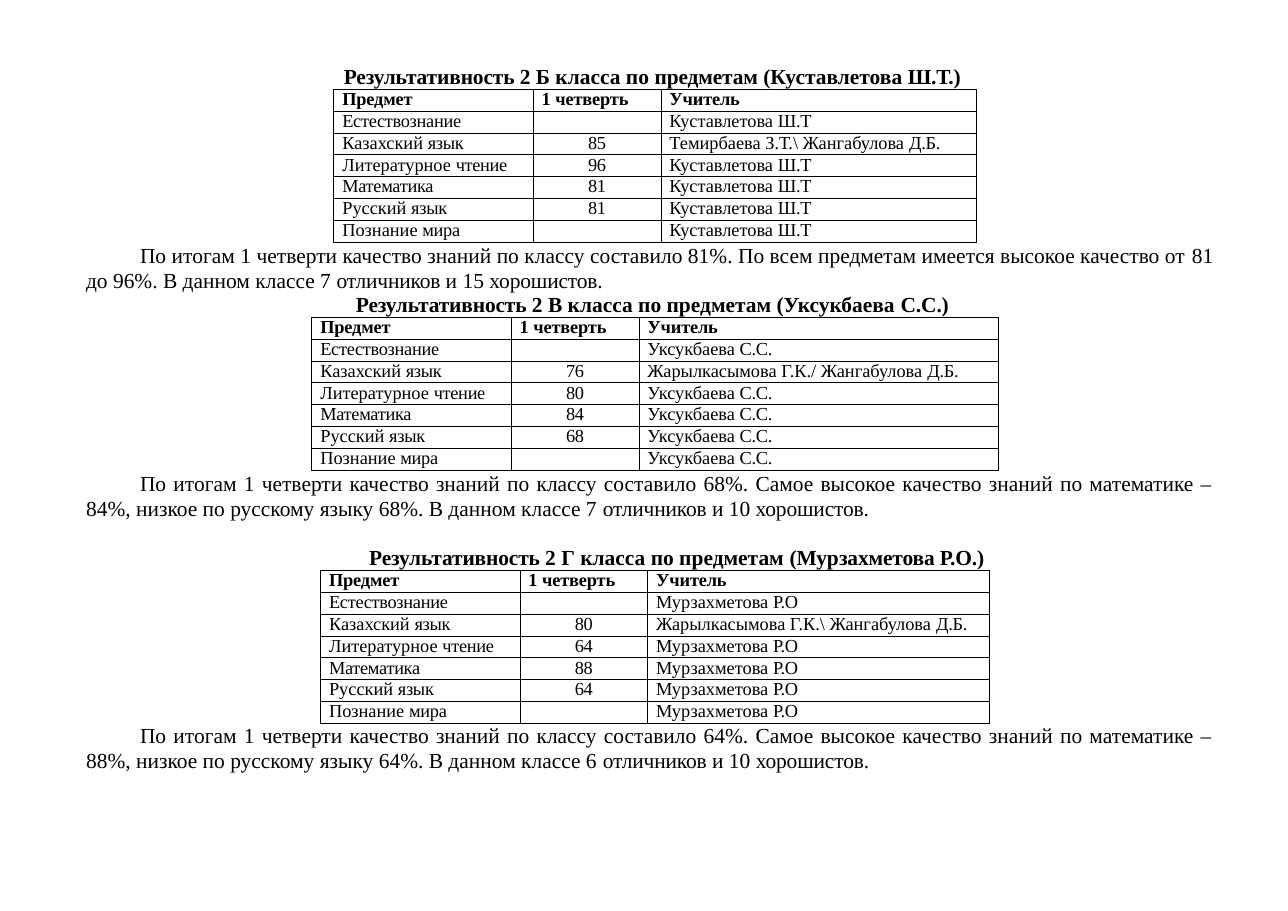
"""Build a slide of school results: three class tables with their summaries."""
from dataclasses import dataclass

from lxml.etree import SubElement as Sub
from pptx import Presentation as Deck
from pptx.dml.color import RGBColor as Color
from pptx.enum.text import MSO_AUTO_SIZE as Fit, PP_ALIGN as Align
from pptx.oxml.ns import qn
from pptx.slide import Slide
from pptx.text.text import TextFrame as Frame
from pptx.util import Inches, Pt


@dataclass(frozen=True)
class Theme:
    """Colours, font and type sizes in points."""
    ink: str = "000000"
    font: str = "Times New Roman"
    body: float = 14
    cell: float = 12
    blank: float = 10
    rule: float = 0.5


@dataclass(frozen=True)
class Group:
    """One class table; lengths are percent of the slide."""
    left: float
    top: float
    last: float
    tutor: str
    pair: str
    marks: tuple[str, ...]


@dataclass(frozen=True)
class Note:
    """A text box; a bar in its text switches tight spacing on or off."""
    left: float
    top: float
    wide: float
    tall: float
    inset: float
    title: str
    text: str = ""
    shift: float = 0.09
    before: float = 0
    pitch: float | None = None


THEME = Theme()
WIDE, TALL = Inches(11.69), Inches(8.27)
ROW, FIRST, SECOND, PAD = 2.4, 15.48, 9.92, 0.66
HEAD = ("Предмет", "1 четверть", "Учитель")
TOPICS = ("Естествознание", "Казахский язык", "Литературное чтение",
          "Математика", "Русский язык", "Познание мира")
LEAD = "По итогам 1 четверти качество знаний по классу составило "
BEST = "Самое высокое качество знаний по математике – "

GROUPS = (
    Group(25.92, 9.79, 24.47, "Куставлетова Ш.Т",
          "Темирбаева З.Т.\\ Жангабулова Д.Б.", ("", "85", "96", "81", "81", "")),
    Group(24.21, 34.82, 27.89, "Уксукбаева С.С.",
          "Жарылкасымова Г.К./ Жангабулова Д.Б.", ("", "76", "80", "84", "68", "")),
    Group(24.89, 62.6, 26.52, "Мурзахметова Р.О",
          "Жарылкасымова Г.К.\\ Жангабулова Д.Б.", ("", "80", "64", "88", "64", "")),
)
NOTES = (
    Note(26.6, 6.77, 48.85, 3.14, 0.12,
         "|Результативность |2 Б класса по |предметам |(Куставлетова |Ш.Т.)", before=0.9),
    Note(6.59, 26.36, 88.45, 8.59, 0.36,
         "|Результативность |2 В класса по предметам (Уксукбаева |С.С.)",
         LEAD + "81%. По всем предметам имеется высокое качество от |81 |"
         "до 96%. В данном классе 7| отличников |и 15 |хорошистов.",
         shift=21.04, pitch=15.9),
    Note(6.59, 51.39, 88.45, 11.25, 0.36,
         "|Результативность |2 Г класса по предметам |(Мурзахметова Р.О.)",
         LEAD + "68%. " + BEST + "84%, низкое по русскому языку 68%. "
         "В данном классе 7 |отличников |и 10| хорошистов.",
         shift=22.07, before=15.2),
    Note(6.59, 79.08, 88.45, 5.8, 0.36, "",
         LEAD + "64%. " + BEST + "88%, низкое по русскому языку 64%. "
         "В данном классе 6 |отличников |и 10 |хорошистов."),
)


def across(share: float) -> int:
    """Turn a percent of the slide's width into a length."""
    return round(WIDE * share / 100)


def down(share: float) -> int:
    """Turn a percent of the slide's height into a length."""
    return round(TALL * share / 100)


def write(frame: Frame, text: str, *, size: float, bold: bool = False,
          align: Align = Align.LEFT, left: float = 0, right: float = 0,
          indent: float = 0, pitch: float | None = None, before: float = 0,
          tight: int = -10) -> None:
    """Add one paragraph in the given format."""
    para = frame.paragraphs[0]
    if para.runs:
        para = frame.add_paragraph()
    para.alignment, para.space_before = align, Pt(before)
    if pitch:
        para.line_spacing = Pt(pitch)
    props = para._p.get_or_add_pPr()
    for name, share in (("marL", left), ("marR", right), ("indent", indent)):
        props.set(name, str(across(share)))
    for turn, part in enumerate(text.split("|")):
        if not part:
            continue
        run = para.add_run()
        run.text = part
        font = run.font
        font.name, font.size, font.bold = THEME.font, Pt(size), bold
        font.color.rgb = Color.from_string(THEME.ink)
        run._r.get_or_add_rPr().set("spc", str(tight if turn % 2 else 0))
    if not para.runs:
        end = Sub(para._p, qn("a:endParaRPr"), sz=str(round(THEME.blank * 100)))
        Sub(end, qn("a:latin"), typeface=THEME.font)


def add_note(slide: Slide, note: Note) -> None:
    """Draw a summary and the title of the table below it."""
    box = slide.shapes.add_textbox(across(note.left), down(note.top),
                                   across(note.wide), down(note.tall))
    frame = box.text_frame
    frame.word_wrap, frame.auto_size = True, Fit.SHAPE_TO_FIT_TEXT
    frame.margin_left = frame.margin_right = frame.margin_bottom = 0
    frame.margin_top = down(note.inset)
    if note.text:
        write(frame, note.text, size=THEME.body, align=Align.JUSTIFY, left=0.09,
              right=0.86, indent=4.19, pitch=16.1, before=2)
    if note.title:
        write(frame, note.title, size=THEME.body, bold=True, left=note.shift,
              pitch=note.pitch, before=note.before)


def add_group(slide: Slide, group: Group) -> None:
    """Draw the table of one class."""
    rows = [HEAD] + [(topic, mark, group.pair if topic == TOPICS[1] else group.tutor)
                     for topic, mark in zip(TOPICS, group.marks)]
    spans = (FIRST, SECOND, group.last)
    table = slide.shapes.add_table(len(rows), len(spans), across(group.left),
                                   down(group.top), across(sum(spans)),
                                   down(ROW * len(rows))).table
    table.first_row = table.horz_banding = False
    for col, span in zip(table.columns, spans):
        col.width = across(span)
    for line, row in enumerate(rows):
        table.rows[line].height = down(ROW)
        for place, text in enumerate(row):
            cell = table.cell(line, place)
            cell.margin_left = cell.margin_right = 0
            cell.margin_top = cell.margin_bottom = 0
            mark = line > 0 and place == 1
            start, gap, end = text.rpartition(" ")
            write(cell.text_frame, f"{start}{gap}|{end}", size=THEME.cell,
                  bold=line == 0, align=Align.CENTER if mark else Align.LEFT,
                  left=0 if mark else PAD, pitch=13.3, tight=-20 if line else -10)
            props = cell._tc.get_or_add_tcPr()
            for side in ("a:lnL", "a:lnR", "a:lnT", "a:lnB"):
                edge = Sub(props, qn(side), w=str(Pt(THEME.rule)))
                Sub(Sub(edge, qn("a:solidFill")), qn("a:srgbClr"), val=THEME.ink)
            cell.fill.background()


def main() -> None:
    """Build and save the deck."""
    deck = Deck()
    deck.slide_width, deck.slide_height = WIDE, TALL
    slide = deck.slides.add_slide(deck.slide_layouts[6])
    for note in NOTES:
        add_note(slide, note)
    for group in GROUPS:
        add_group(slide, group)
    deck.save("out.pptx")


if __name__ == "__main__":
    main()
